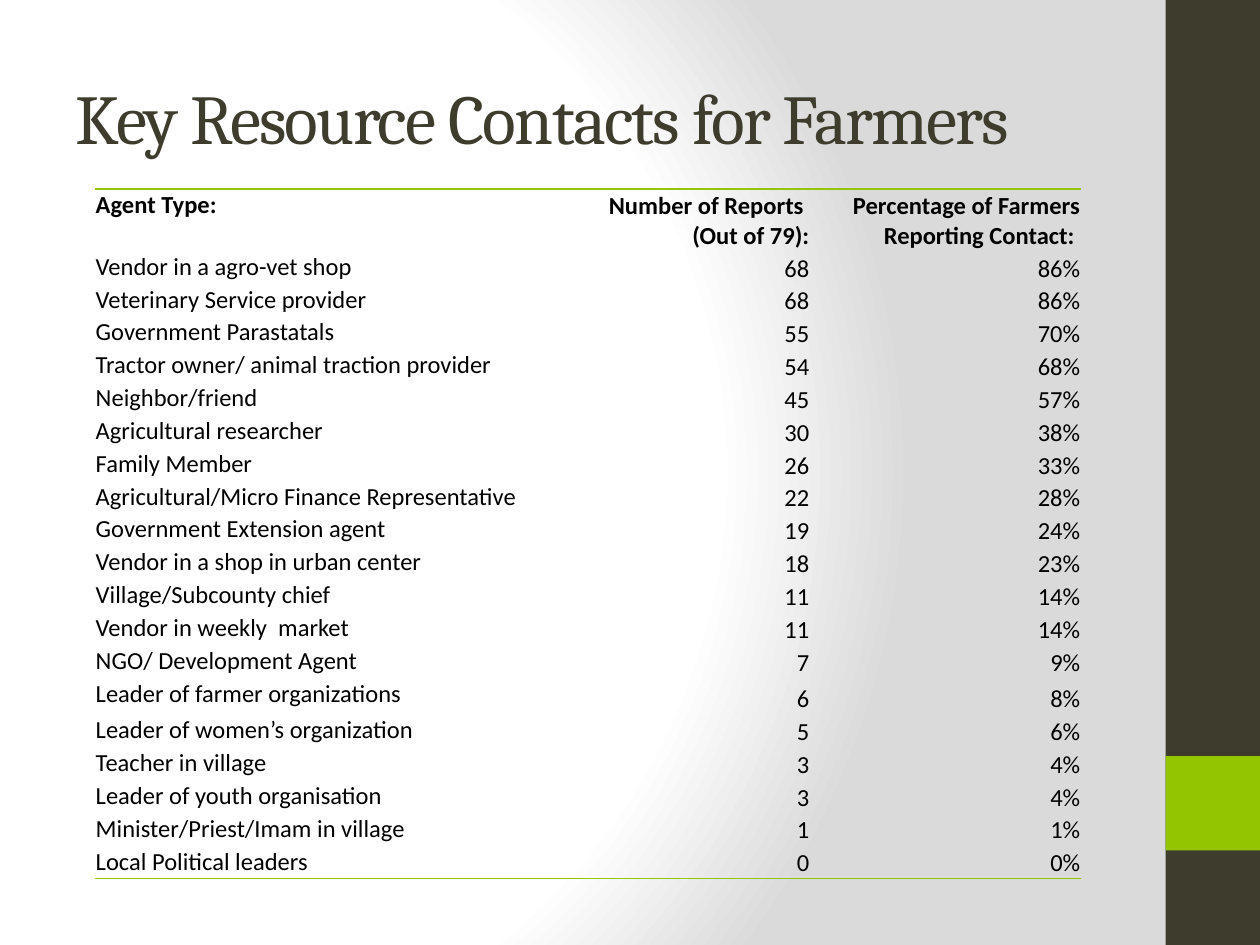
from lxml import etree
from pptx import Presentation
from pptx.dml.color import RGBColor
from pptx.enum.shapes import MSO_SHAPE
from pptx.enum.text import MSO_ANCHOR, PP_ALIGN
from pptx.oxml import parse_xml
from pptx.oxml.ns import nsdecls, qn
from pptx.util import Pt

DARK = RGBColor(0x3E, 0x3D, 0x2D)
GREEN = RGBColor(0x94, 0xC6, 0x00)
BLACK = RGBColor(0, 0, 0)
WHITE = RGBColor(0xFF, 0xFF, 0xFF)
GREY = RGBColor(0xDA, 0xDA, 0xDA)

NO_GRID = "{2D5ABB26-0587-4C30-8999-92F81FD0307C}"
FARMERS = 79
HEADER = ["Agent Type:", "Number of Reports \n(Out of 79):",
          "Percentage of Farmers Reporting Contact: "]
REPORTS = [
    ("Vendor in a agro-vet shop", 68),
    ("Veterinary Service provider", 68),
    ("Government Parastatals", 55),
    ("Tractor owner/ animal traction provider", 54),
    ("Neighbor/friend", 45),
    ("Agricultural researcher", 30),
    ("Family Member", 26),
    ("Agricultural/Micro Finance Representative", 22),
    ("Government Extension agent", 19),
    ("Vendor in a shop in urban center", 18),
    ("Village/Subcounty chief", 11),
    ("Vendor in weekly  market", 11),
    ("NGO/ Development Agent", 7),
    ("Leader of farmer organizations", 6),
    ("Leader of women’s organization", 5),
    ("Teacher in village", 3),
    ("Leader of youth organisation", 3),
    ("Minister/Priest/Imam in village", 1),
    ("Local Political leaders", 0),
]
COL_WIDTHS = [256.2, 153, 154.8]
ROW_HEIGHT = 18.77
SPECIAL_HEIGHTS = {0: 35.28, 14: 20.88}


def set_attrs(obj, values):
    for name, value in values.items():
        setattr(obj, name, value)


def style_runs(tf, color, values):
    for p in tf.paragraphs:
        for r in p.runs:
            set_attrs(r.font, values)
            r.font.color.rgb = color


def paint_background(s):
    s.background.fill.solid()
    bg = s.background._cSld.bg.bgPr
    stops = "".join(f'<a:gs pos="{pos * 1000}"><a:srgbClr val="{color}"/></a:gs>'
                    for pos, color in [(0, WHITE), (75, WHITE), (100, GREY)])
    grad = parse_xml(
        f'<a:gradFill {nsdecls("a")} rotWithShape="1"><a:gsLst>{stops}</a:gsLst>'
        '<a:path path="circle"><a:fillToRect l="20000" t="50000" r="100000" b="50000"/>'
        '</a:path></a:gradFill>')
    bg.replace(bg.find(qn("a:solidFill")), grad)


def add_block(s, box, color):
    sp = s.shapes.add_shape(MSO_SHAPE.RECTANGLE, *map(Pt, box))
    sp.shadow.inherit = False
    sp.fill.solid()
    sp.fill.fore_color.rgb = color
    sp.line.fill.background()


def add_sidebar(s, box):
    left, top, width, height = box
    add_block(s, box, DARK)
    add_block(s, (left, top + height * 0.8, width, width), GREEN)


def add_title(s, box, text):
    tf = s.shapes.add_textbox(*map(Pt, box)).text_frame
    set_attrs(tf, {"word_wrap": True, "vertical_anchor": MSO_ANCHOR.MIDDLE, "text": text})
    style_runs(tf, DARK, {"name": "Cambria", "size": Pt(40)})
    tf.paragraphs[0].runs[0].font._element.set("spc", "-100")


def add_border(cell, side):
    tc_pr = cell._tc.get_or_add_tcPr()
    ln = etree.Element(qn(f"a:{side}"), w=str(Pt(1)))
    fill = etree.SubElement(ln, qn("a:solidFill"))
    etree.SubElement(fill, qn("a:srgbClr"), val=str(GREEN))
    tc_pr.insert(0, ln)


def fill_cell(cell, text, is_number, is_header):
    set_attrs(cell, {"text": text, "margin_left": Pt(0.72), "margin_right": Pt(0.72),
                     "margin_top": Pt(0.72), "margin_bottom": Pt(0),
                     "vertical_anchor": MSO_ANCHOR.BOTTOM if is_number else MSO_ANCHOR.TOP})
    cell.fill.background()
    for p in cell.text_frame.paragraphs:
        p.alignment = PP_ALIGN.RIGHT if is_number else PP_ALIGN.LEFT
    style_runs(cell.text_frame, BLACK, {"name": "Calibri", "size": Pt(14), "bold": is_header})


def add_contacts_table(s, left, top):
    rows = [HEADER] + [[agent, str(n), f"{n / FARMERS:.0%}"] for agent, n in REPORTS]
    heights = [SPECIAL_HEIGHTS.get(i, ROW_HEIGHT) for i in range(len(rows))]
    table = s.shapes.add_table(len(rows), len(COL_WIDTHS), Pt(left), Pt(top),
                               Pt(sum(COL_WIDTHS)), Pt(sum(heights))).table
    table.horz_banding = False
    table._tbl.tblPr.find(qn("a:tableStyleId")).text = NO_GRID
    for col, width in zip(table.columns, COL_WIDTHS):
        col.width = Pt(width)
    for i, (row, height, texts) in enumerate(zip(table.rows, heights, rows)):
        row.height = Pt(height)
        for j, (cell, text) in enumerate(zip(row.cells, texts)):
            fill_cell(cell, text, j > 0, i == 0)
    for row, side in [(0, "lnT"), (len(rows) - 1, "lnB")]:
        for j in range(len(COL_WIDTHS)):
            add_border(table.cell(row, j), side)


def main():
    prs = Presentation()
    set_attrs(prs, {"slide_width": Pt(720), "slide_height": Pt(540)})
    s = prs.slides.add_slide(prs.slide_layouts[6])
    paint_background(s)
    add_sidebar(s, (666, 0, 54, 540))
    add_title(s, (36, 21.6, 600, 90), "Key Resource Contacts for Farmers")
    add_contacts_table(s, 54, 108)
    prs.save("out.pptx")


if __name__ == "__main__":
    main()
